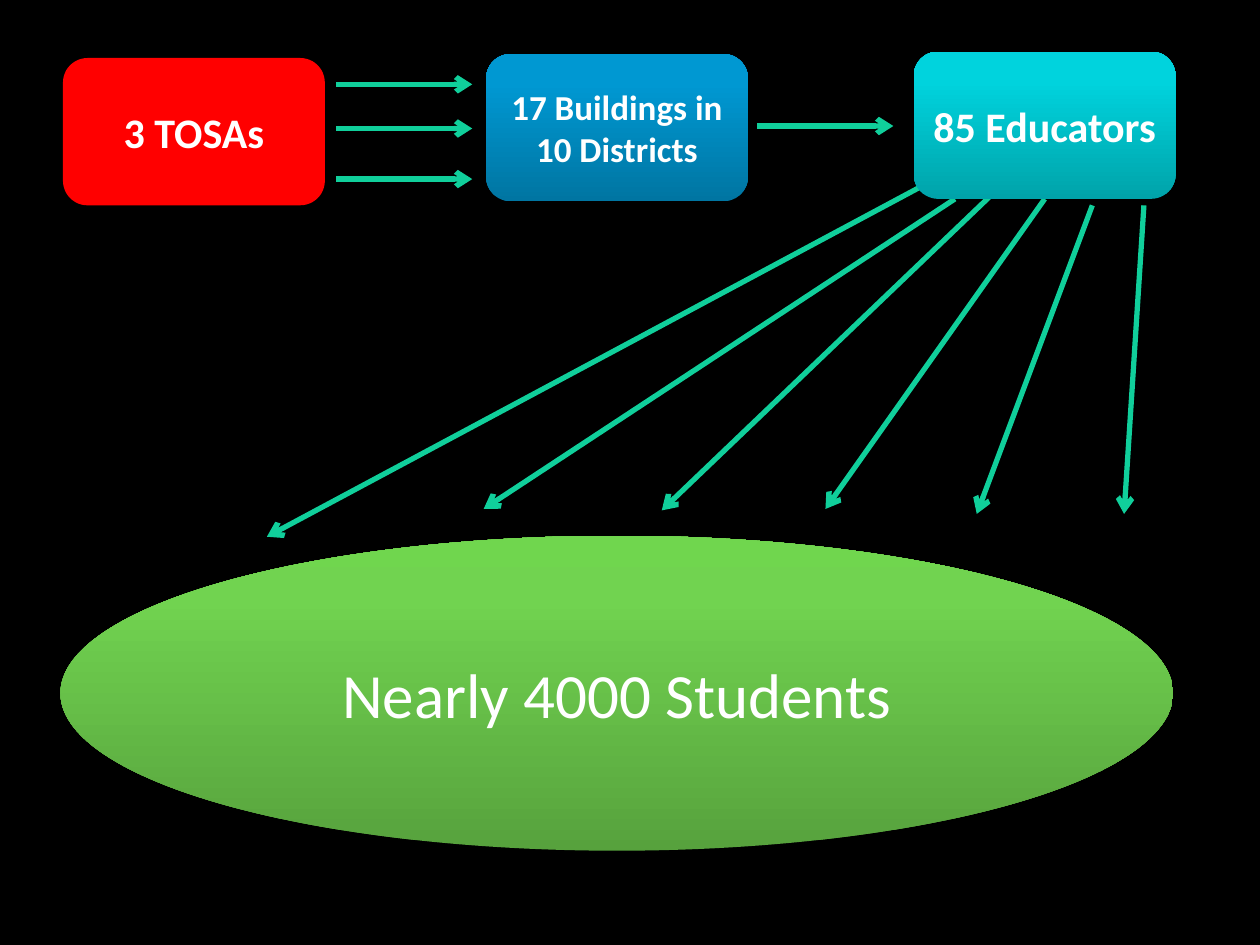
from copy import deepcopy

from pptx import Presentation
from pptx.dml.color import RGBColor as Rgb
from pptx.enum.shapes import MSO_CONNECTOR as Line, MSO_SHAPE as Kind
from pptx.enum.text import MSO_ANCHOR as Anchor, PP_ALIGN as Align
from pptx.oxml.ns import qn
from pptx.util import Cm, Pt
from lxml.etree import SubElement

# Content
COLORS = {"back": "000000", "text": "FFFFFF", "arrow": "10CF9B"}
FILLS = {  # one colour, or a gradient from bottom to top
    "red": ["FF0000"],
    "blue": ["0075A2", "0098D2", "0099D3"],
    "teal": ["00A3AA", "00D3DD", "00D4DE"],
    "green": ["57A23D", "71D350", "70D64E"],
}
STOPS = [0, 0.8, 1]
BOX = (5.28, 2.97)
# text, left, top, fill, font size
BOXES = [
    ("3 TOSAs", 1.27, 1.17, "red", 24),
    ("17 Buildings in 10 Districts", 9.8, 1.09, "blue", 20),
    ("85 Educators", 18.42, 1.04, "teal", 24),
]
# start x, height of each level arrow
LEVEL = [(6.78, 1.7), (6.78, 2.59), (6.78, 3.61), (15.27, 2.54)]
REACH = 2.74
# arrows from the educators down to the students
FAN = [
    (18.85, 3.61, 5.38, 10.82),
    (19.25, 4.01, 9.75, 10.26),
    (20.32, 3.61, 13.34, 10.29),
    (21.06, 4.01, 16.64, 10.26),
    (22.02, 4.14, 19.69, 10.36),
    (23.06, 4.14, 22.66, 10.36),
]

deck = Presentation()
deck.slide_width, deck.slide_height = Cm(25.4), Cm(19.05)
slide = deck.slides.add_slide(deck.slide_layouts[6])
slide.background.fill.solid()
slide.background.fill.fore_color.rgb = Rgb.from_string(COLORS["back"])


def paint(fill, tones):
    if len(tones) == 1:
        fill.solid()
        fill.fore_color.rgb = Rgb.from_string(tones[0])
        return
    fill.gradient()
    fill.gradient_angle = 90
    last = fill.gradient_stops[1]._gs
    last.addnext(deepcopy(last))  # third stop
    for stop, pos, tone in zip(fill.gradient_stops, STOPS, tones):
        stop.position = pos
        stop.color.rgb = Rgb.from_string(tone)


def add_node(kind, text, left, top, size, fill, points, bold):
    node = slide.shapes.add_shape(kind, *map(Cm, (left, top, *size)))
    node.shadow.inherit = False
    node.line.fill.background()
    paint(node.fill, FILLS[fill])
    frame = node.text_frame
    frame.word_wrap = True
    frame.vertical_anchor = Anchor.MIDDLE
    para = frame.paragraphs[0]
    para.alignment = Align.CENTER
    run = para.add_run()
    run.text = text
    font = run.font
    font.name, font.size, font.bold = "Calibri", Pt(points), bold
    font.color.rgb = Rgb.from_string(COLORS["text"])


def add_arrow(*ends):
    arrow = slide.shapes.add_connector(Line.STRAIGHT, *map(Cm, ends))
    arrow.line.width = Pt(3)
    arrow.line.color.rgb = Rgb.from_string(COLORS["arrow"])
    SubElement(arrow.line._ln, qn("a:tailEnd"), type="arrow")
    SubElement(arrow._element.spPr, qn("a:effectLst"))


# Arrows lie behind the shapes
for x, y in LEVEL:
    add_arrow(x, y, x + REACH, y)
for ends in FAN:
    add_arrow(*ends)

# Boxes and the student oval
for text, left, top, fill, points in BOXES:
    add_node(Kind.ROUNDED_RECTANGLE, text, left, top, BOX, fill, points, True)
add_node(Kind.OVAL, "Nearly 4000 Students", 1.22, 10.8, (22.43, 6.35),
         "green", 36, False)

deck.save("out.pptx")
